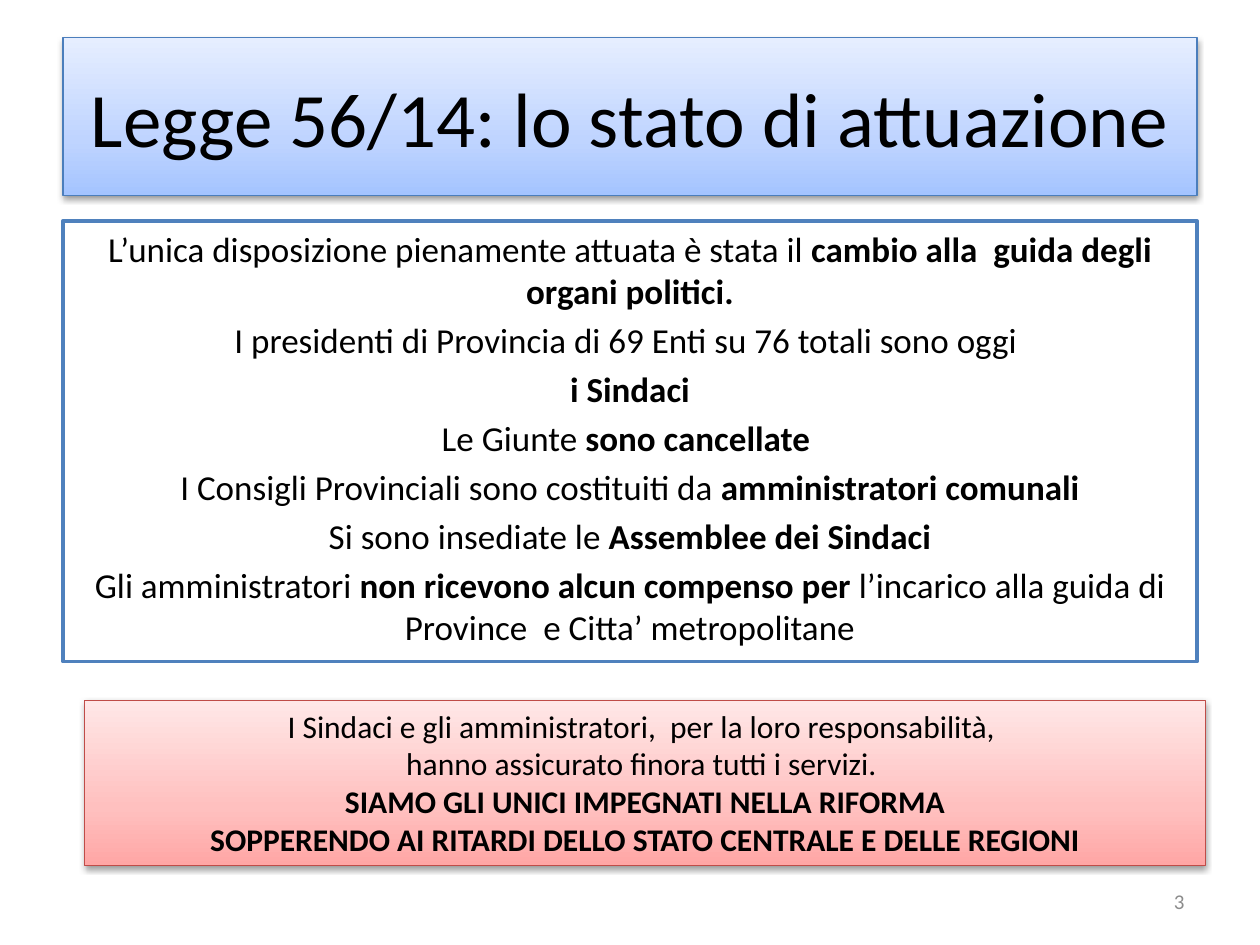
import copy

import lxml.etree
import pptx
import pptx.dml.color
import pptx.enum.shapes
import pptx.enum.text
import pptx.oxml.ns
import pptx.util

TINTS = {
    "ink": "000000", "grey": "8C8C8C", "white": "FFFFFF",
    "frame": "4F81BD", "blue": "4B7EBC", "red": "BF4C48",
}
FADES = {
    "blue": {0: "A4C4FF", 0.35: "BFD4FF", 1: "E6EEFF"},
    "red": {0: "FFA6A5", 0.35: "FFC0BF", 1: "FFE7E7"},
}
POINTS = [
    "L’unica disposizione pienamente attuata è stata il *cambio alla  guida degli organi politici.",
    "I presidenti di Provincia di 69 Enti su 76 totali sono oggi ",
    "*i Sindaci",
    "Le Giunte *sono cancellate ",
    "I Consigli Provinciali sono costituiti da *amministratori comunali",
    "Si sono insediate le *Assemblee dei Sindaci",
    "Gli amministratori *non ricevono alcun compenso per *l’incarico alla guida di Province  e Citta’ metropolitane",
]
CLAIMS = [
    "I Sindaci e gli amministratori,  per la loro responsabilità, ",
    "hanno assicurato finora tutti i servizi. ",
    "*SIAMO GLI UNICI IMPEGNATI NELLA RIFORMA",
    "*SOPPERENDO AI RITARDI DELLO STATO CENTRALE E DELLE REGIONI",
]


def paint(code):
    """Turn a hex string into a colour."""
    return pptx.dml.color.RGBColor.from_string(code)


def write(frame, lines, size, font="Calibri", tint="ink", align="CENTER", anchor="TOP"):
    """Fill a text frame with lines in which each asterisk toggles bold."""
    frame.word_wrap = True
    frame.auto_size = pptx.enum.text.MSO_AUTO_SIZE.NONE
    frame.vertical_anchor = getattr(pptx.enum.text.MSO_ANCHOR, anchor)
    for spot, line in enumerate(lines):
        para = frame.add_paragraph() if spot else frame.paragraphs[0]
        para.alignment = getattr(pptx.enum.text.PP_ALIGN, align)
        for turn, part in enumerate(line.split("*")):
            if part:
                run = para.add_run()
                run.text = part
                run.font.name = font
                run.font.size = pptx.util.Pt(size)
                run.font.bold = turn % 2 == 1
                run.font.color.rgb = paint(TINTS[tint])


class Page:
    """Hold the style and the current slide."""

    def __init__(self, slide):
        """Keep the slide to draw on."""
        self.slide = slide

    def place(self, shape, spot):
        """Move a shape to left, top, width and height in centimetres."""
        shape.left, shape.top, shape.width, shape.height = map(pptx.util.Cm, spot)

    def edge(self, shape, tint, width):
        """Draw the outline of a shape."""
        shape.line.color.rgb = paint(TINTS[tint])
        shape.line.width = pptx.util.Pt(width)

    def glow(self, shape, tint):
        """Give a shape an upward fade, an outline and a soft shadow."""
        qn = pptx.oxml.ns.qn
        shape.fill.gradient()
        shape.fill.gradient_angle = 90
        stops = next(shape._element.spPr.iter(qn("a:gsLst")))
        stops.insert(1, copy.deepcopy(stops[0]))
        for stop, (place, code) in zip(shape.fill.gradient_stops, FADES[tint].items()):
            stop.position = place
            stop.color.rgb = paint(code)
        self.edge(shape, tint, 0.75)
        shape.shadow.inherit = False
        root = shape._element.spPr.find(qn("a:effectLst"))
        cast = lxml.etree.SubElement(
            root, qn("a:outerShdw"), blurRad=str(pptx.util.Pt(3.1)),
            dist=str(pptx.util.Pt(1.6)), dir="5400000", rotWithShape="0")
        black = lxml.etree.SubElement(cast, qn("a:srgbClr"), val=TINTS["ink"])
        lxml.etree.SubElement(black, qn("a:alpha"), val="38000")

    def title(self, text, spot):
        """Format the title placeholder."""
        shape = self.slide.shapes.title
        self.place(shape, spot)
        self.glow(shape, "blue")
        write(shape.text_frame, [text], 44, anchor="MIDDLE")

    def body(self, lines, spot):
        """Format the body placeholder as a framed list without bullets."""
        shape = self.slide.placeholders[1]
        self.place(shape, spot)
        shape.fill.solid()
        shape.fill.fore_color.rgb = paint(TINTS["white"])
        self.edge(shape, "frame", 2)
        write(shape.text_frame, lines, 20)
        for para in shape.text_frame.paragraphs:
            props = para._p.get_or_add_pPr()
            props.set("marL", "0")
            props.set("indent", "0")
            lxml.etree.SubElement(props, pptx.oxml.ns.qn("a:buNone"))

    def label(self, text, spot):
        """Add a small grey label on the right."""
        shape = self.slide.shapes.add_textbox(*map(pptx.util.Cm, spot))
        write(shape.text_frame, [text], 12, tint="grey", align="RIGHT", anchor="MIDDLE")

    def panel(self, lines, spot):
        """Add a red panel with text."""
        kind = pptx.enum.shapes.MSO_SHAPE.RECTANGLE
        shape = self.slide.shapes.add_shape(kind, *map(pptx.util.Cm, spot))
        self.glow(shape, "red")
        write(shape.text_frame, lines, 18)


def main():
    """Build the slide and save it."""
    deck = pptx.Presentation()
    deck.slide_width, deck.slide_height = pptx.util.Cm(25.4), pptx.util.Cm(19.05)
    page = Page(deck.slides.add_slide(deck.slide_layouts[1]))
    page.title("Legge 56/14: lo stato di attuazione", (1.27, 0.76, 22.86, 3.18))
    page.body(POINTS, (1.27, 4.45, 22.86, 8.89))
    page.label("3", (18.21, 17.65, 5.92, 1.02))
    page.panel(CLAIMS, (1.7, 14.12, 22.61, 3.33))
    deck.save("out.pptx")


if __name__ == "__main__":
    main()
